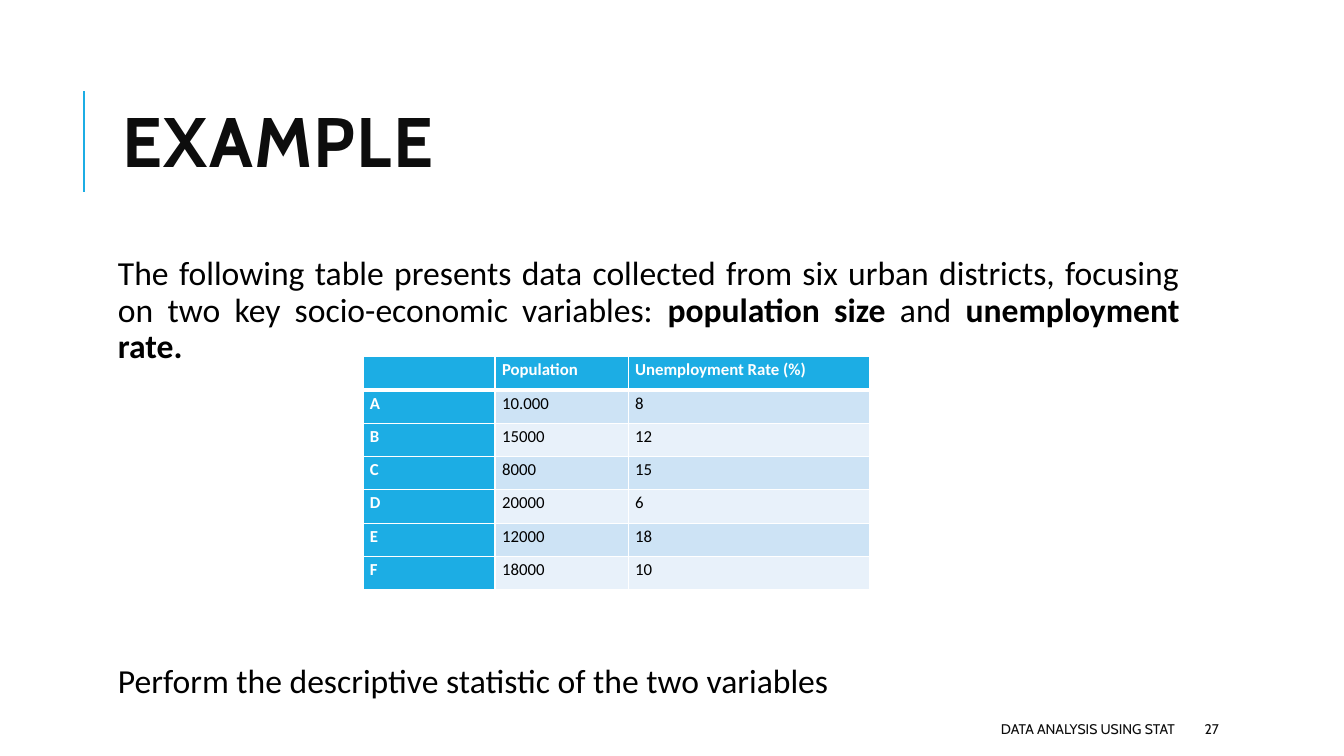
"""Build the example slide with the district table."""
from lxml import etree
from pptx import Presentation
from pptx.dml.color import RGBColor
from pptx.enum import shapes, text
from pptx.oxml import ns
from pptx.util import Inches, Pt

COLORS = {"accent": "1CADE4", "band": "CDE3F5", "light": "E8F1FA",
          "white": "FFFFFF", "black": "000000", "ink": "0D0D0D"}
ALIGN = text.PP_ALIGN

TITLE = "EXAMPLE"
INTRO = [
    ("The following table presents data collected from six urban districts, "
     "focusing on two key socio-economic variables: ", False),
    ("population size ", True), ("and", False), (" unemployment rate.", True),
]
TASK = "Perform the descriptive statistic of the two variables"
FOOTER = "DATA ANALYSIS USING STAT"
PAGE = "27"
ROWS = [
    ("", "Population ", "Unemployment Rate (%)"),
    ("A", "10.000", "8"),
    ("B", "15000", "12"),
    ("C", "8000", "15"),
    ("D", "20000", "6"),
    ("E", "12000", "18"),
    ("F", "18000", "10"),
]
COL_WIDTHS = [1.31, 1.32, 2.4]
ROW_HEIGHT = 0.33


def rgb(name):
    return RGBColor.from_string(COLORS[name])


def write(p, runs, size, font, color, align=ALIGN.LEFT, spacing=1.0):
    p.alignment = align
    p.line_spacing = spacing
    for words, bold in runs:
        r = p.add_run()
        r.text = words
        r.font.size = Pt(size)
        r.font.name = font
        r.font.bold = bold
        r.font.color.rgb = rgb(color)


def add_text(slide, box, runs, size, font, color, inset=0.1,
             anchor=text.MSO_ANCHOR.MIDDLE, **layout):
    sp = slide.shapes.add_textbox(*map(Inches, box))
    tf = sp.text_frame
    tf.word_wrap = True
    tf.vertical_anchor = anchor
    tf.margin_left = tf.margin_right = Inches(inset)
    tf.margin_top = tf.margin_bottom = Inches(0.05)
    write(tf.paragraphs[0], runs, size, font, color, **layout)
    return sp


def add_borders(cell, widths):
    tcPr = cell._tc.get_or_add_tcPr()
    for i, (side, width) in enumerate(widths.items()):
        ln = etree.Element(ns.qn(f"a:ln{side}"), w=str(Pt(width)))
        fill = etree.SubElement(ln, ns.qn("a:solidFill"))
        etree.SubElement(fill, ns.qn("a:srgbClr"), val=COLORS["white"])
        tcPr.insert(i, ln)


def add_districts(slide):
    size = sum(COL_WIDTHS), ROW_HEIGHT * len(ROWS)
    table = slide.shapes.add_table(len(ROWS), len(COL_WIDTHS),
                                   *map(Inches, (3.6, 3.54, *size))).table
    table.first_col = True
    for col, width in zip(table.columns, COL_WIDTHS):
        col.width = Inches(width)
    for i, row in enumerate(ROWS):
        table.rows[i].height = Inches(ROW_HEIGHT)
        for j, value in enumerate(row):
            cell = table.cell(i, j)
            heading = i == 0 or j == 0
            band = "band" if i % 2 else "light"
            cell.margin_left = cell.margin_right = Inches(0.07)
            cell.margin_top = cell.margin_bottom = 0
            cell.fill.solid()
            cell.fill.fore_color.rgb = rgb("accent" if heading else band)
            write(cell.text_frame.paragraphs[0], [(value, heading)], 12,
                  "Calibri", "white" if heading else "black",
                  ALIGN.JUSTIFY, 1.15)
            add_borders(cell, {"L": 1, "R": 1, "T": 3 if i == 1 else 1,
                               "B": 3 if i == 0 else 1})


def add_rule(slide):
    line = slide.shapes.add_connector(shapes.MSO_CONNECTOR.STRAIGHT,
                                      *map(Inches, (0.83, 1.9, 0.83, 0.9)))
    line.line.color.rgb = rgb("accent")
    line.line.width = Pt(1.5)
    etree.SubElement(line._element.spPr, ns.qn("a:effectLst"))


def main():
    prs = Presentation()
    prs.slide_width, prs.slide_height = Inches(13.33), Inches(7.5)
    slide = prs.slides.add_slide(prs.slide_layouts[6])

    add_rule(slide)
    title = add_text(slide, (1.12, 0.64, 10.63, 1.64), [(TITLE, True)],
                     50, "Cabin", "ink", spacing=0.8)
    r = title.text_frame.paragraphs[0].runs[0]
    r.font._element.set("spc", "100")

    for top, height, runs in ((2.5, 1.2, INTRO), (6.54, 0.5, [(TASK, False)])):
        add_text(slide, (1.12, top, 10.63, height), runs, 24, "Calibri",
                 "black", inset=0.05, anchor=text.MSO_ANCHOR.TOP,
                 align=ALIGN.JUSTIFY, spacing=0.9)

    for left, width, words, align in ((5.3, 6.45, FOOTER, ALIGN.RIGHT),
                                      (11.85, 1.06, PAGE, ALIGN.LEFT)):
        add_text(slide, (left, 7.08, width, 0.3), [(words, False)],
                 10, "Cabin", "ink", align=align)

    add_districts(slide)
    prs.save("out.pptx")


if __name__ == "__main__":
    main()
